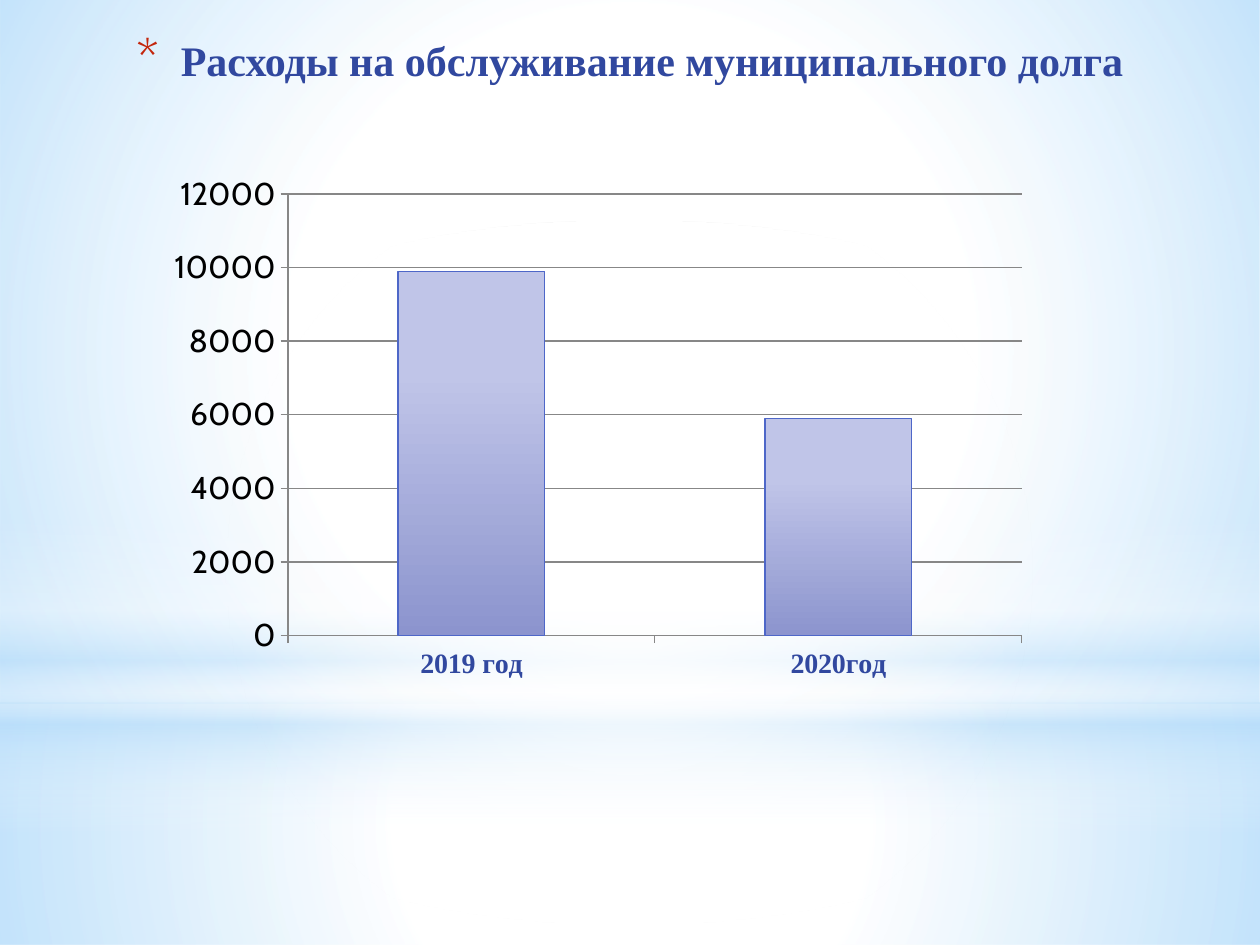
from lxml import etree
from pptx import Presentation
from pptx.chart.data import CategoryChartData
from pptx.dml.color import RGBColor
from pptx.enum import chart as ch, shapes, text
from pptx.oxml.ns import qn
from pptx.util import Inches, Pt

TITLE = "Расходы на обслуживание муниципального долга"
YEARS = ["2019 год", "2020год"]
COSTS = [9900, 5900]
NAVY, SKY, WHITE, GREY = "31489F", "B4DCFA", "FFFFFF", "878787"
RECT, OVAL = shapes.MSO_SHAPE.RECTANGLE, shapes.MSO_SHAPE.OVAL
BACKDROP = [
    (RECT, 5.58, 1.92, [(0, WHITE, 91), (37, WHITE, 76), (100, SKY, 79)], None),
    (RECT, 0, 5.58, [(0, WHITE, 89), (48, WHITE, 62), (100, SKY, 79)], None),
    (RECT, 4.12, 2.5, [(0, WHITE, 0), (29, WHITE, 30), (45, SKY, 40),
                       (55, WHITE, 26), (65, SKY, 60), (100, WHITE, 0)], 90),
    (OVAL, 1.75, 5.58, [(0, WHITE, 100), (56, WHITE, 0)], None),
]
BAR_STOPS = [(28, "C0C5E8", 100), (100, "8C94CE", 100)]
PLOT = {"x": 0.148, "y": 0.055, "w": 0.832, "h": 0.841}


def rgb(value):
    return RGBColor.from_string(value)


def child(parent, tag, **attrs):
    return etree.SubElement(parent, qn(tag), {k: str(v) for k, v in attrs.items()})


def set_font(font, size, color, name, bold=False):
    font.size, font.name, font.bold = Pt(size), name, bold
    font.color.rgb = rgb(color)


def set_text(tf, content, **style):
    p = tf.paragraphs[0]
    r = p.add_run()
    r.text = content
    set_font(r.font, **style)
    return p


def set_gradient(fill, element, stops, angle=None):
    fill.gradient()
    grad = element.find(".//" + qn("a:gradFill"))
    for old in list(grad):
        grad.remove(old)
    stop_list = child(grad, "a:gsLst")
    for pos, color, opacity in stops:
        stop = child(stop_list, "a:gs", pos=pos * 1000)
        child(child(stop, "a:srgbClr", val=color), "a:alpha", val=opacity * 1000)
    if angle is None:
        path = child(grad, "a:path", path="circle")
        child(path, "a:fillToRect", l=50000, t=50000, r=50000, b=50000)
    else:
        child(grad, "a:lin", ang=angle * 60000, scaled=0)


def add_backdrop(s):
    for kind, top, height, stops, angle in BACKDROP:
        sp = s.shapes.add_shape(kind, 0, Inches(top), Inches(10), Inches(height))
        sp.shadow.inherit = False
        sp.line.fill.background()
        set_gradient(sp.fill, sp._element, stops, angle)


def add_title(s):
    title = s.shapes.title
    s.shapes._spTree.append(title._element)
    title.left, title.top = Inches(0.5), Inches(0.22)
    title.width, title.height = Inches(9), Inches(1.25)
    tf = title.text_frame
    tf.word_wrap = True
    tf.vertical_anchor = text.MSO_ANCHOR.TOP
    p = set_text(tf, TITLE, size=24, color=NAVY, name="Times New Roman", bold=True)
    p.alignment = text.PP_ALIGN.CENTER
    props = p._p.get_or_add_pPr()
    props.set("marL", str(Inches(0.35)))
    props.set("indent", str(Inches(-0.35)))
    child(child(props, "a:buClr"), "a:srgbClr", val="C3260C")
    child(props, "a:buSzPct", val=128000)
    child(props, "a:buFont", typeface="Cabin")
    child(props, "a:buChar", char="*")


def add_cost_chart(s):
    data = CategoryChartData()
    data.categories = YEARS
    data.add_series("Series 1", COSTS)
    chart = s.shapes.add_chart(ch.XL_CHART_TYPE.COLUMN_STACKED, Inches(1.25),
                               Inches(1.31), Inches(7), Inches(4.17), data).chart
    chart.has_legend = chart.has_title = False
    set_font(chart.font, 18, "000000", "Cabin")
    cat, val = chart.category_axis, chart.value_axis
    set_font(cat.tick_labels.font, 16, NAVY, "Times New Roman", True)
    val.minimum_scale, val.maximum_scale, val.major_unit = 0, 12000, 2000
    val.has_major_gridlines = True
    for axis in (cat, val):
        axis.major_tick_mark = ch.XL_TICK_MARK.OUTSIDE
    for part in (cat, val, val.major_gridlines):
        part.format.line.color.rgb = rgb(GREY)
        part.format.line.width = Pt(0.75)
    plot = chart.plots[0]
    plot.gap_width, plot.overlap, plot.vary_by_categories = 150, 100, False
    bars = plot.series[0]
    set_gradient(bars.format.fill, bars._element, BAR_STOPS, 90)
    bars.format.line.color.rgb = rgb("4E67C8")
    bars.format.line.width = Pt(0.75)

    area = chart._chartSpace.find(".//" + qn("c:plotArea"))
    for old in area.findall(qn("c:layout")):
        area.remove(old)
    layout = etree.Element(qn("c:layout"))
    area.insert(0, layout)
    manual = child(layout, "c:manualLayout")
    child(manual, "c:layoutTarget", val="inner")
    child(manual, "c:xMode", val="edge")
    child(manual, "c:yMode", val="edge")
    for key, share in PLOT.items():
        child(manual, "c:" + key, val=share)


def main():
    prs = Presentation()
    prs.slide_width, prs.slide_height = Inches(10), Inches(7.5)
    s = prs.slides.add_slide(prs.slide_layouts[5])
    s.background.fill.solid()
    s.background.fill.fore_color.rgb = rgb(WHITE)
    add_backdrop(s)
    add_title(s)
    add_cost_chart(s)
    prs.save("out.pptx")


if __name__ == "__main__":
    main()
